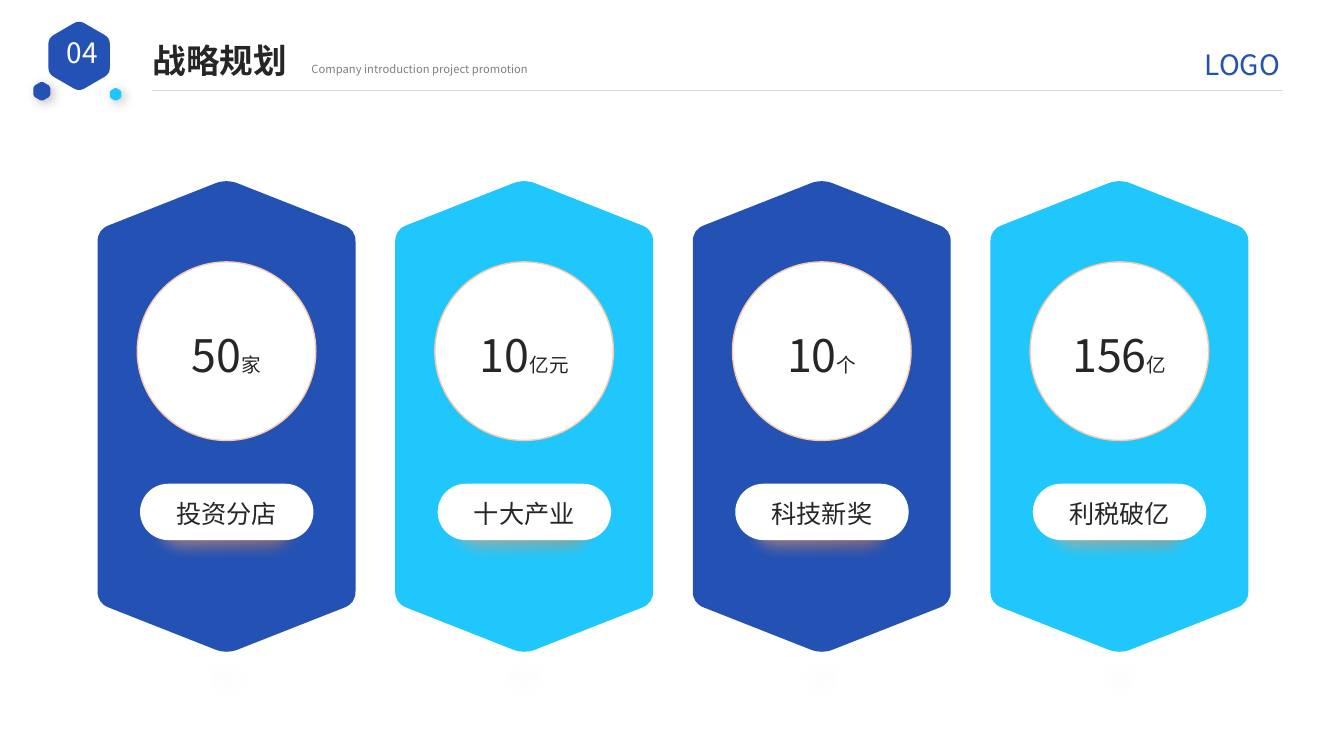
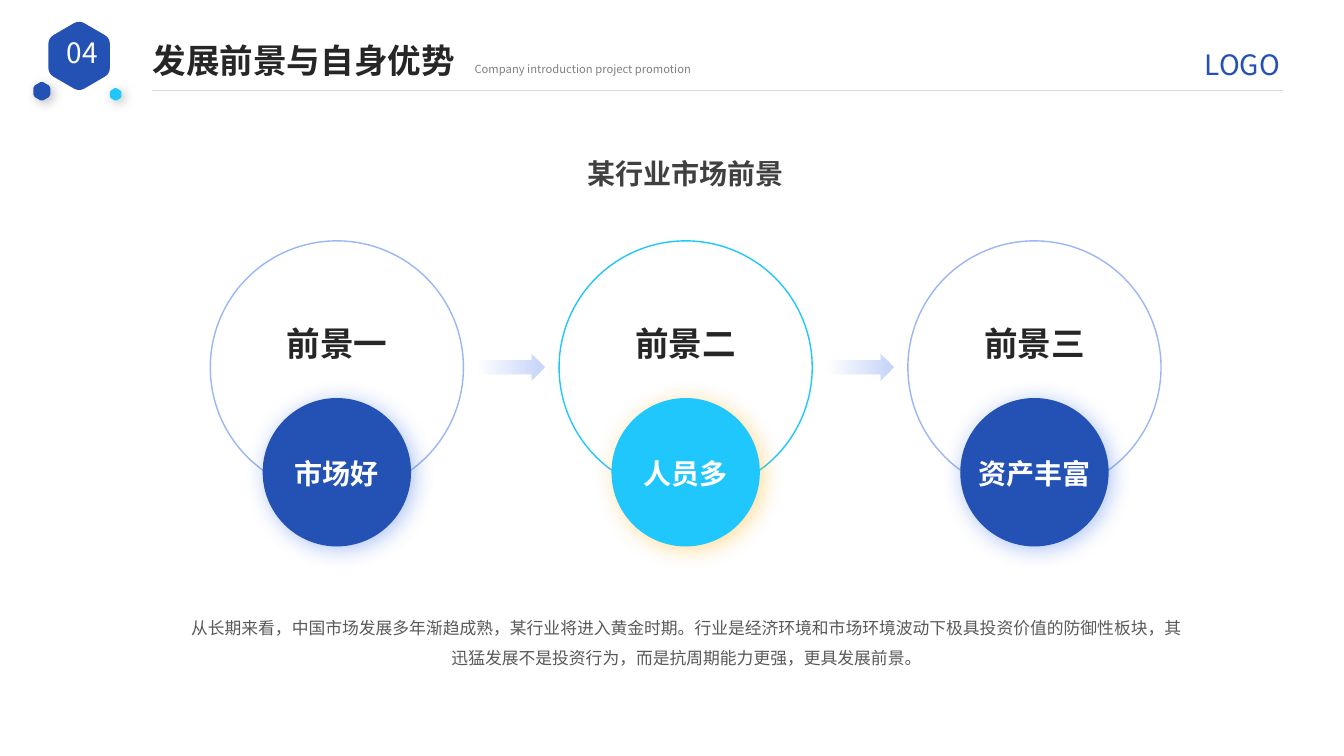
from dataclasses import dataclass
from typing import Any, NamedTuple, Optional

from lxml import etree
from pptx import Presentation
from pptx.dml.color import RGBColor
from pptx.enum.shapes import MSO_CONNECTOR, MSO_SHAPE
from pptx.enum.text import MSO_ANCHOR, MSO_AUTO_SIZE, PP_ALIGN
from pptx.oxml import parse_xml
from pptx.oxml.ns import nsdecls, qn
from pptx.util import Cm, Pt

OVAL, PILL, ARROW = MSO_SHAPE.OVAL, MSO_SHAPE.ROUNDED_RECTANGLE, MSO_SHAPE.RIGHT_ARROW
LINE = MSO_CONNECTOR.STRAIGHT
LEFT, CENTER = PP_ALIGN.LEFT, PP_ALIGN.CENTER
TOP, MIDDLE = MSO_ANCHOR.TOP, MSO_ANCHOR.MIDDLE
FIXED = MSO_AUTO_SIZE.NONE
TITLE_ONLY = 5


@dataclass(frozen=True)
class Theme:
    font: str = "Noto Sans CJK SC"
    blue: str = "2351B4"
    cyan: str = "20C7FD"
    white: str = "FFFFFF"
    black: str = "000000"
    ink: str = "262626"
    dark: str = "404040"
    body: str = "595959"
    gray: str = "808080"
    rule: str = "D9D9D9"
    peach: str = "F8CBAD"
    sand: str = "F4B183"
    amber: str = "ED7D31"
    gold: str = "FEAC00"
    mist: str = "4472C4"
    sky: str = "9AB6F4"
    glow: str = "346BE8"
    huge: int = 32
    title: int = 24
    head: int = 20
    name: int = 18
    unit: int = 14
    text: int = 12
    note: int = 8


T = Theme()


class Box(NamedTuple):
    x: float
    y: float
    w: float
    h: float


class Style(NamedTuple):
    size: int
    color: str
    bold: bool = False
    align: Any = CENTER
    space: Optional[float] = None


class Shade(NamedTuple):
    color: str
    alpha: int
    blur: int


class Stop(NamedTuple):
    at: int
    color: str
    alpha: int


class Card(NamedTuple):
    count: str
    unit: str
    name: str
    color: str


class Stage(NamedTuple):
    head: str
    name: str
    color: str
    ring: str
    glow: str


DUSK = Shade(T.black, 25, 8)
CARDS = [
    Card("50", "家", "投资分店", T.blue),
    Card("10", "亿元", "十大产业", T.cyan),
    Card("10", "个", "科技新奖", T.blue),
    Card("156", "亿", "利税破亿", T.cyan),
]
STAGES = [
    Stage("前景一", "市场好", T.blue, T.sky, T.glow),
    Stage("前景二", "人员多", T.cyan, T.cyan, T.gold),
    Stage("前景三", "资产丰富", T.blue, T.sky, T.glow),
]


# Text
def write(shape: Any, text: str, style: Style, wrap: bool = True,
          anchor: Any = TOP, inset: bool = True, drop: float = 0) -> Any:
    frame = shape.text_frame
    frame.word_wrap, frame.auto_size = wrap, FIXED
    frame.vertical_anchor = anchor
    if not inset:
        frame.margin_left = frame.margin_right = frame.margin_bottom = 0
        frame.margin_top = Cm(drop)
    para = frame.paragraphs[0]
    para.add_run().text = text
    para.alignment = style.align
    if style.space:
        para.line_spacing = style.space
    font = para.font
    font.name, font.size, font.bold = T.font, Pt(style.size), style.bold
    font.color.rgb = RGBColor.from_string(style.color)
    base = para._p.pPr.find(qn("a:defRPr"))
    etree.SubElement(base, qn("a:ea")).set("typeface", T.font)
    return para


def label(slide: Any, box: Box, text: str, style: Style, wrap: bool = True,
          anchor: Any = TOP) -> None:
    write(slide.shapes.add_textbox(*map(Cm, box)), text, style, wrap, anchor)


# Shapes and effects
def effect(shape: Any, xml: str) -> None:
    shape._element.spPr.find(qn("a:effectLst")).append(parse_xml(xml))


def paint(shape: Any, fill: Optional[str], line: Optional[str] = None,
          shade: Optional[Shade] = None) -> Any:
    shape.shadow.inherit = False
    if fill:
        shape.fill.solid()
        shape.fill.fore_color.rgb = RGBColor.from_string(fill)
    else:
        shape.fill.background()
    if line:
        shape.line.color.rgb = RGBColor.from_string(line)
        shape.line.width = Pt(1)
    else:
        shape.line.fill.background()
    if shade:
        effect(shape, f'<a:outerShdw {nsdecls("a")} blurRad="{Pt(shade.blur)}" '
               f'dist="{Pt(3)}" dir="2700000" algn="tl" rotWithShape="0">'
               f'<a:srgbClr val="{shade.color}"><a:alpha val="{shade.alpha * 1000}"/>'
               '</a:srgbClr></a:outerShdw>')
    return shape


def add(slide: Any, kind: Any, box: Box, fill: Optional[str],
        line: Optional[str] = None, shade: Optional[Shade] = None) -> Any:
    shape = slide.shapes.add_shape(kind, *map(Cm, box))
    if kind == PILL:
        shape.adjustments[0] = 0.5
    return paint(shape, fill, line, shade)


def blend(shape: Any, stops: list[Stop], way: str) -> None:
    marks = "".join(
        f'<a:gs pos="{s.at * 1000}"><a:srgbClr val="{s.color}">'
        f'<a:alpha val="{s.alpha * 1000}"/></a:srgbClr></a:gs>' for s in stops)
    props = shape._element.spPr
    props.replace(props.find(qn("a:noFill")), parse_xml(
        f'<a:gradFill {nsdecls("a")} rotWithShape="1"><a:gsLst>{marks}</a:gsLst>'
        f'{way}</a:gradFill>'))


def round_way(l: int, t: int, r: int, b: int) -> str:
    return (f'<a:path path="circle"><a:fillToRect l="{l}000" t="{t}000" '
            f'r="{r}000" b="{b}000"/></a:path>')


def soften(shape: Any, size: int) -> None:
    effect(shape, f'<a:softEdge {nsdecls("a")} rad="{Pt(size)}"/>')


def hexagon(slide: Any, box: Box, rise: float, cut: float, fill: str,
            shade: Optional[Shade] = None) -> None:
    """Upright hexagon; each corner is a curve starting `cut` before it."""
    x, y, w, h = map(Cm, box)
    rise, cut, half = Cm(rise), Cm(cut), w // 2
    tips = [(x + half, y), (x + w, y + rise), (x + w, y + h - rise),
            (x + half, y + h), (x, y + h - rise), (x, y + rise)]

    def toward(a: tuple, b: tuple) -> tuple:
        part = cut / ((b[0] - a[0]) ** 2 + (b[1] - a[1]) ** 2) ** 0.5
        return tuple(int(p + (q - p) * part) for p, q in zip(a, b))

    dots = []
    for i, tip in enumerate(tips):
        start, end = toward(tip, tips[i - 1]), toward(tip, tips[(i + 1) % 6])
        peak = tuple((a + 2 * b + c) // 4 for a, b, c in zip(start, tip, end))
        dots += [start, peak, end]
    pen = slide.shapes.build_freeform(*dots[0], scale=1.0)
    pen.add_line_segments(dots[1:], close=True)
    shape = pen.convert_to_shape()
    # Turn the two short lines at each corner into one curve
    track = shape._element.spPr.find(".//" + qn("a:path"))
    nodes = list(track)
    for i, tip in enumerate(tips):
        peak, end = nodes[3 * i + 1:3 * i + 3]
        curve = etree.Element(qn("a:quadBezTo"))
        bend = etree.SubElement(curve, qn("a:pt"))
        bend.set("x", str(tip[0] - shape.left))
        bend.set("y", str(tip[1] - shape.top))
        curve.append(end[0])
        track.replace(peak, curve)
        track.remove(end)
    paint(shape, fill, shade=shade)


def badge(slide: Any, x: float, y: float, w: float, fill: str,
          shade: Optional[Shade] = None) -> None:
    hexagon(slide, Box(x, y, w, w * 1.16), w * 0.29, w * 0.1, fill, shade)


# Header shared by the slides, moved from the first one to their layout
def crown(slide: Any) -> None:
    own = list(slide.shapes._spTree)
    badge(slide, 1.22, 0.51, 1.55, T.blue)
    label(slide, Box(1.32, 0.76, 1.5, 1.1), "04", Style(T.head, T.white), False, MIDDLE)
    badge(slide, 2.77, 2.21, 0.29, T.cyan, DUSK)
    rule = slide.shapes.add_connector(LINE, Cm(3.82), Cm(2.28), Cm(32.33), Cm(2.28))
    rule.line.color.rgb = RGBColor.from_string(T.rule)
    rule.line.width = Pt(0.5)
    etree.SubElement(rule._element.spPr, qn("a:effectLst"))
    label(slide, Box(30.04, 1.08, 2.54, 1.12), "LOGO", Style(T.head, T.blue), False)
    badge(slide, 0.84, 2.05, 0.43, T.blue, DUSK)
    for part in list(slide.shapes._spTree)[len(own):]:
        slide.slide_layout.shapes._spTree.append(part)


def start(deck: Any, title: str, note: float) -> Any:
    slide = deck.slides.add_slide(deck.slide_layouts[TITLE_ONLY])
    head = slide.shapes.title
    head.left, head.top, head.width, head.height = map(Cm, (3.59, 0.88, 9, 1.27))
    write(head, title, Style(T.title, T.ink, True, LEFT), False)
    label(slide, Box(note, 1.45, 8.2, 0.61),
          "Company introduction project promotion", Style(T.note, T.gray, align=LEFT))
    return slide


# Slide 1: four figures
def card(slide: Any, mid: float, item: Card) -> None:
    haze = add(slide, OVAL, Box(mid - 3.75, 16.26, 7.5, 1.6), None)
    blend(haze, [Stop(0, T.mist, 46), Stop(73, T.mist, 0)], round_way(50, 50, 50, 50))
    soften(haze, 22)
    hexagon(slide, Box(mid - 3.25, 4.51, 6.5, 11.97), 1.28, 0.3, item.color)
    disc = add(slide, OVAL, Box(mid - 2.25, 6.6, 4.5, 4.5), T.white, T.peach)
    para = write(disc, item.count, Style(T.huge, T.ink), False, MIDDLE, False, 0.18)
    unit = para.add_run()
    unit.text, unit.font.size = item.unit, Pt(T.unit)
    warm = add(slide, PILL, Box(mid - 2.2, 12.75, 4.37, 1.42), None)
    blend(warm, [Stop(0, T.sand, 68), Stop(90, T.amber, 53)], round_way(0, 0, 100, 100))
    soften(warm, 12)
    pill = add(slide, PILL, Box(mid - 2.18, 12.19, 4.37, 1.42), T.white)
    write(pill, item.name, Style(T.name, T.ink), False, MIDDLE, False, 0.1)


def plan(slide: Any) -> None:
    for i, item in enumerate(CARDS):
        card(slide, 5.71 + 7.5 * i, item)


# Slide 2: three stages
def stage(slide: Any, mid: float, item: Stage) -> None:
    add(slide, OVAL, Box(mid - 3.19, 6.07, 6.38, 6.38), T.white, item.ring)
    disc = add(slide, OVAL, Box(mid - 1.87, 10.03, 3.74, 3.74), item.color,
               shade=Shade(item.glow, 40, 16))
    write(disc, item.name, Style(T.head, T.white, True), False, MIDDLE, False, 0.08)
    label(slide, Box(mid - 2.86, 8, 5.72, 1.27), item.head, Style(T.title, T.ink, True))


def outlook(slide: Any) -> None:
    label(slide, Box(4.39, 15.19, 25.83, 1.7),
          "从长期来看，中国市场发展多年渐趋成熟，某行业将进入黄金时期。"
          "行业是经济环境和市场环境波动下极具投资价值的防御性板块，"
          "其迅猛发展不是投资行为，而是抗周期能力更强，更具发展前景。",
          Style(T.text, T.body, space=1.5))
    label(slide, Box(13.41, 3.65, 7.75, 1.19), "某行业市场前景",
          Style(T.head, T.dark, True, space=1.2))
    first, step = 8.49, 8.79
    for i, item in enumerate(STAGES):
        stage(slide, first + step * i, item)
    for i in range(len(STAGES) - 1):
        arrow = add(slide, ARROW, Box(first + step * (i + 0.5) - 0.85, 8.9, 1.68, 0.69), None)
        blend(arrow, [Stop(0, T.glow, 0), Stop(100, T.glow, 30)], '<a:lin ang="0" scaled="1"/>')


def main() -> None:
    deck = Presentation()
    deck.slide_width, deck.slide_height = Cm(33.87), Cm(19.05)
    figures = start(deck, "战略规划", 7.6)
    crown(figures)
    plan(figures)
    outlook(start(deck, "发展前景与自身优势", 11.71))
    deck.save("out.pptx")


if __name__ == "__main__":
    main()
